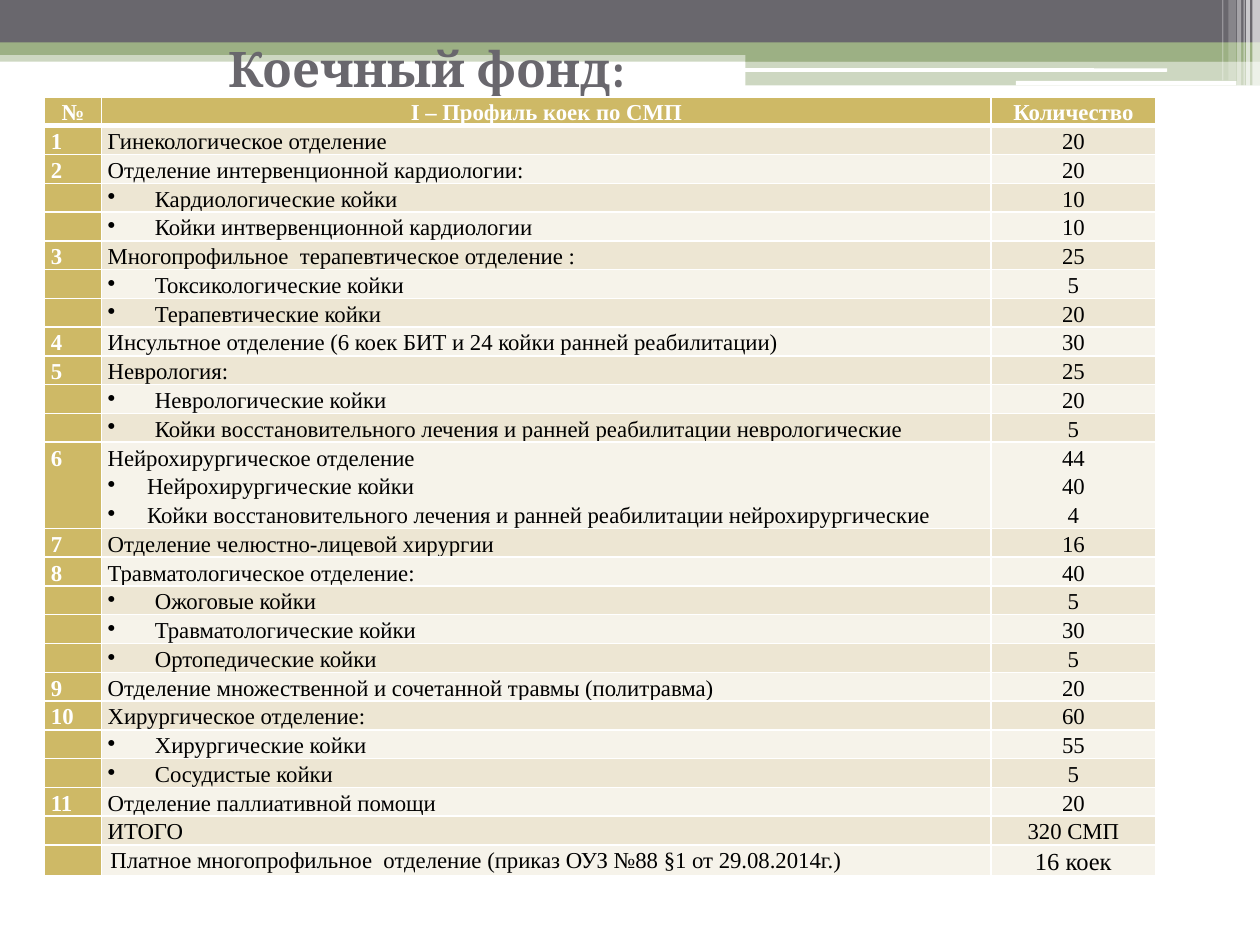
from dataclasses import dataclass

import pptx
import pptx.dml.color
import pptx.enum.shapes
import pptx.enum.text
import pptx.oxml
import pptx.oxml.ns
import pptx.util
from lxml import etree

Pt = pptx.util.Pt
qn = pptx.oxml.ns.qn
ALIGN = pptx.enum.text.PP_ALIGN
ANCHOR = pptx.enum.text.MSO_ANCHOR
SHAPE = pptx.enum.shapes.MSO_SHAPE

COLORS = {
    "slate": "69676D", "green": "9CB084", "white": "FFFFFF", "black": "000000",
    "gold": "CEB966", "band_dark": "EDE6D3", "band_light": "F6F3EA",
}
BODY_FONT = "Times New Roman"
LINE_HEIGHT = 16.4
BORDER_TAGS = ("a:lnL", "a:lnR", "a:lnT", "a:lnB")


@dataclass(frozen=True)
class Band:
    left: float
    top: float
    width: float
    height: float
    color: str
    opacity: int = 100
    rounded: bool = False


@dataclass(frozen=True)
class Entry:
    """One table row; each line of profile pairs with one line of beds."""
    number: str
    profile: str
    beds: str
    indent: float = 0
    inset: float = 3.6
    beds_size: float = 13


def sub(profile: str, beds: str) -> Entry:
    return Entry("", "• " + profile, beds, indent=27)


BANDS = [
    Band(0, 28.8, 720, 6.5, "green", 50),
    Band(0, 0, 720, 24.5, "slate"),
    Band(0, 24.2, 720, 7.2, "green"),
    Band(426, 28, 294, 7.2, "green"),
    Band(426, 34.6, 294, 14.2, "green", 50),
    Band(425.5, 39, 241.5, 2, "white", rounded=True),
    Band(580.5, 46.2, 126, 2.6, "white", rounded=True),
    Band(715.7, 0, 4.3, 49, "white", 65),
    Band(712.1, 0, 2.2, 49, "white", 65),
    Band(710.6, 0, 0.7, 49, "white", 60),
    Band(707, 0, 2.2, 49, "white", 40),
    Band(702, 0, 4.3, 46, "white", 20),
    Band(698.4, 0, 0.7, 46, "white", 30),
]

ENTRIES = [
    Entry("№", "І – Профиль коек по СМП", "Количество"),
    Entry("1", "Гинекологическое отделение", "20"),
    Entry("2", "Отделение интервенционной кардиологии:", "20"),
    sub("Кардиологические койки", "10"),
    sub("Койки интвервенционной кардиологии", "10"),
    Entry("3", "Многопрофильное  терапевтическое отделение :", "25"),
    sub("Токсикологические койки", "5"),
    sub("Терапевтические койки", "20"),
    Entry("4", "Инсультное отделение (6 коек БИТ и 24 койки ранней реабилитации)", "30"),
    Entry("5", "Неврология:", "25"),
    sub("Неврологические койки", "20"),
    sub("Койки восстановительного лечения и ранней реабилитации неврологические", "5"),
    Entry("6", "Нейрохирургическое отделение\n• Нейрохирургические койки\n"
          "• Койки восстановительного лечения и ранней реабилитации нейрохирургические",
          "44\n40\n4", indent=22.5),
    Entry("7", "Отделение челюстно-лицевой хирургии", "16"),
    Entry("8", "Травматологическое отделение:", "40"),
    sub("Ожоговые койки", "5"),
    sub("Травматологические койки", "30"),
    sub("Ортопедические койки", "5"),
    Entry("9", "Отделение множественной и сочетанной травмы (политравма)", "20"),
    Entry("10", "Хирургическое отделение:", "60"),
    sub("Хирургические койки", "55"),
    sub("Сосудистые койки", "5"),
    Entry("11", "Отделение паллиативной помощи", "20"),
    Entry("", "ИТОГО", "320 СМП"),
    Entry("", "Платное многопрофильное  отделение (приказ ОУЗ №88 §1 от 29.08.2014г.)",
          "16 коек", inset=5.2, beds_size=14),
]


def rgb(name: str) -> pptx.dml.color.RGBColor:
    return pptx.dml.color.RGBColor.from_string(COLORS[name])


def style_font(font, name: str, size: float, color: str, bold: bool) -> None:
    font.name, font.size, font.bold = name, Pt(size), bold
    font.color.rgb = rgb(color)


def draw_band(slide, band: Band) -> None:
    kind = SHAPE.ROUNDED_RECTANGLE if band.rounded else SHAPE.RECTANGLE
    stripe = slide.shapes.add_shape(
        kind, Pt(band.left), Pt(band.top), Pt(band.width), Pt(band.height))
    stripe.shadow.inherit = False
    stripe.line.fill.background()
    stripe.fill.solid()
    stripe.fill.fore_color.rgb = rgb(band.color)
    if band.opacity < 100:
        color = stripe.fill._xPr.find(".//" + qn("a:srgbClr"))
        etree.SubElement(color, qn("a:alpha"), val=str(band.opacity * 1000))


def draw_title(slide) -> None:
    title = slide.shapes.title
    title.left, title.top, title.width, title.height = Pt(76.3), Pt(-3), Pt(335), Pt(84)
    title.text_frame.text = "Коечный фонд:"
    title.text_frame.vertical_anchor = ANCHOR.MIDDLE
    heading = title.text_frame.paragraphs[0]
    heading.alignment = ALIGN.CENTER
    style_font(heading.font, "Cambria", 28, "slate", True)
    slide.shapes._spTree.append(title._element)  # above the bands


def set_borders(cell, bottom: float) -> None:
    properties = cell._tc.get_or_add_tcPr()
    for tag in BORDER_TAGS:
        width = bottom if tag == "a:lnB" else 1
        line = etree.SubElement(properties, qn(tag), w=str(Pt(width)))
        fill = etree.SubElement(line, qn("a:solidFill"))
        etree.SubElement(fill, qn("a:srgbClr"), val=COLORS["white"])


def add_bullet(paragraph, indent: float) -> None:
    properties = paragraph._p.get_or_add_pPr()
    properties.set("marL", str(Pt(indent)))
    properties.set("indent", str(-Pt(indent)))
    bullet = etree.Element(qn("a:buChar"), char="•")
    properties.insert_element_before(bullet, "a:tabLst", "a:defRPr", "a:extLst")


def fill_cell(cell, text: str, entry: Entry, fill: str, color: str, bold: bool,
              centred: bool, size: float = 13, bottom: float = 1) -> None:
    set_borders(cell, bottom)
    cell.fill.solid()
    cell.fill.fore_color.rgb = rgb(fill)
    cell.margin_left = cell.margin_right = Pt(entry.inset)
    cell.margin_top = cell.margin_bottom = 0
    cell.text = text.replace("• ", "")
    for line, paragraph in zip(text.split("\n"), cell.text_frame.paragraphs):
        paragraph.line_spacing = 1.15
        paragraph.alignment = ALIGN.CENTER if centred else ALIGN.LEFT
        style_font(paragraph.font, BODY_FONT, size, color, bold)
        if line.startswith("•"):
            add_bullet(paragraph, entry.indent)
        if not line:  # keeps an empty cell from stretching its row
            etree.SubElement(paragraph._p, qn("a:endParaRPr"), sz="1000")


def draw_table(slide) -> None:
    widths = (32.4, 508.3, 94.3)
    heights = [LINE_HEIGHT * len(entry.beds.split("\n")) for entry in ENTRIES]
    table = slide.shapes.add_table(len(ENTRIES), len(widths), Pt(25.5), Pt(55.4),
                                   Pt(sum(widths)), Pt(sum(heights))).table
    for column, width in zip(table.columns, widths):
        column.width = Pt(width)
    for index, (row, height, entry) in enumerate(zip(table.rows, heights, ENTRIES)):
        row.height = Pt(height)
        header = index == 0
        band = "gold" if header else "band_dark" if index % 2 else "band_light"
        ink = "white" if header else "black"
        bottom = 3 if header else 1
        number, profile, beds = row.cells
        fill_cell(number, entry.number, entry, "gold", "white", True, header, bottom=bottom)
        fill_cell(profile, entry.profile, entry, band, ink, header, header, bottom=bottom)
        fill_cell(beds, entry.beds, entry, band, ink, header, True, entry.beds_size, bottom)


def main() -> None:
    deck = pptx.Presentation()
    deck.slide_width, deck.slide_height = Pt(720), Pt(540)
    slide = deck.slides.add_slide(deck.slide_layouts[5])
    for band in BANDS:
        draw_band(slide, band)
    draw_title(slide)
    draw_table(slide)
    deck.save("out.pptx")


if __name__ == "__main__":
    main()
